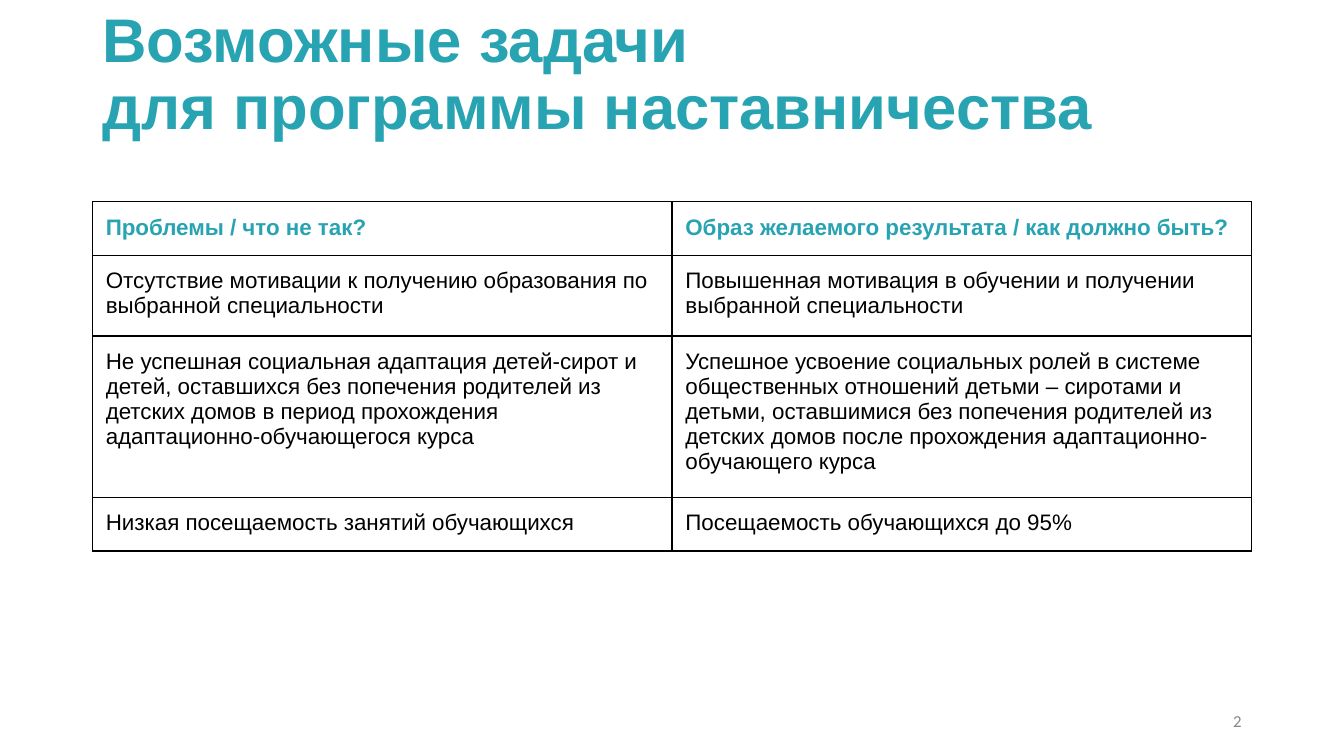
from dataclasses import dataclass

from lxml import etree
from pptx import Presentation
from pptx.dml.color import RGBColor
from pptx.enum.text import MSO_ANCHOR, PP_ALIGN
from pptx.oxml.ns import qn
from pptx.slide import Slide
from pptx.table import _Cell
from pptx.text.text import TextFrame
from pptx.util import Pt

LEFT, RIGHT = PP_ALIGN.LEFT, PP_ALIGN.RIGHT
MIDDLE = MSO_ANCHOR.MIDDLE


@dataclass(frozen=True)
class Theme:
    teal: str = "28A3B2"
    black: str = "000000"
    grey: str = "888888"
    head: str = "Arial"
    note: str = "Calibri"
    title: float = 44
    body: float = 16
    small: float = 12
    rule: float = 1
    inset: float = 9.6


@dataclass(frozen=True)
class Box:
    left: float
    top: float
    width: float
    height: float


@dataclass(frozen=True)
class Row:
    height: float
    problem: str
    result: str


THEME = Theme()
TITLE = Box(66, 28.8, 828, 51.1)
TABLE = Box(66, 144, 828, 249.6)
NUMBER = Box(678, 500.5, 216, 28.8)

ROWS = [
    Row(38.4, "Проблемы / что не так?",
        "Образ желаемого результата / как должно быть?"),
    Row(57.6, "Отсутствие мотивации к получению образования по выбранной "
        "специальности",
        "Повышенная мотивация в обучении и получении выбранной специальности"),
    Row(115.2, "Не успешная социальная адаптация детей-сирот и детей, "
        "оставшихся без попечения родителей из детских домов в период "
        "прохождения адаптационно-обучающегося курса",
        "Успешное усвоение социальных ролей в системе общественных отношений "
        "детьми – сиротами и детьми, оставшимися без попечения родителей из "
        "детских домов после прохождения адаптационно-обучающего курса"),
    Row(38.4, "Низкая посещаемость занятий обучающихся",
        "Посещаемость обучающихся до 95%"),
]


def write(frame: TextFrame, text: str, *, size: float, color: str,
          font: str = THEME.head, bold: bool = False,
          align: PP_ALIGN = LEFT, spacing: float = 1.0) -> None:
    """Fill the frame with one paragraph for each line of text."""
    frame.word_wrap = True
    for i, line in enumerate(text.split("\n")):
        para = frame.add_paragraph() if i else frame.paragraphs[0]
        para.alignment = align
        para.line_spacing = spacing
        run = para.add_run()
        run.text = line
        run.font.size = Pt(size)
        run.font.name = font
        run.font.bold = bold
        run.font.color.rgb = RGBColor.from_string(color)


def add_text(slide: Slide, box: Box, text: str, **style) -> None:
    shape = slide.shapes.add_textbox(
        Pt(box.left), Pt(box.top), Pt(box.width), Pt(box.height))
    shape.text_frame.vertical_anchor = MIDDLE
    write(shape.text_frame, text, **style)


def add_rules(cell: _Cell) -> None:
    """Draw a solid line on all four sides of the cell."""
    props = cell._tc.get_or_add_tcPr()
    for side in ("a:lnL", "a:lnR", "a:lnT", "a:lnB"):
        line = etree.SubElement(props, qn(side), w=str(Pt(THEME.rule)))
        fill = etree.SubElement(line, qn("a:solidFill"))
        etree.SubElement(fill, qn("a:srgbClr"), val=THEME.black)


def add_grid(slide: Slide, box: Box, rows: list[Row]) -> None:
    table = slide.shapes.add_table(
        len(rows), 2, Pt(box.left), Pt(box.top),
        Pt(box.width), Pt(box.height)).table
    table.first_row = False
    table.horz_banding = False
    for column in table.columns:
        column.width = Pt(box.width / 2)
    for r, row in enumerate(rows):
        table.rows[r].height = Pt(row.height)
        head = r == 0
        for c, text in enumerate((row.problem, row.result)):
            cell = table.cell(r, c)
            cell.margin_left = cell.margin_right = Pt(THEME.inset)
            cell.margin_top = cell.margin_bottom = Pt(THEME.inset)
            add_rules(cell)
            cell.fill.background()
            write(cell.text_frame, text, size=THEME.body, bold=head,
                  color=THEME.teal if head else THEME.black)


def main() -> None:
    deck = Presentation()
    deck.slide_width, deck.slide_height = Pt(960), Pt(540)
    slide = deck.slides.add_slide(deck.slide_layouts[6])
    add_text(slide, TITLE, "Возможные задачи\nдля программы наставничества",
             size=THEME.title, color=THEME.teal, bold=True, spacing=0.9)
    add_grid(slide, TABLE, ROWS)
    add_text(slide, NUMBER, "2", size=THEME.small, color=THEME.grey,
             font=THEME.note, align=RIGHT)
    deck.save("out.pptx")


if __name__ == "__main__":
    main()
